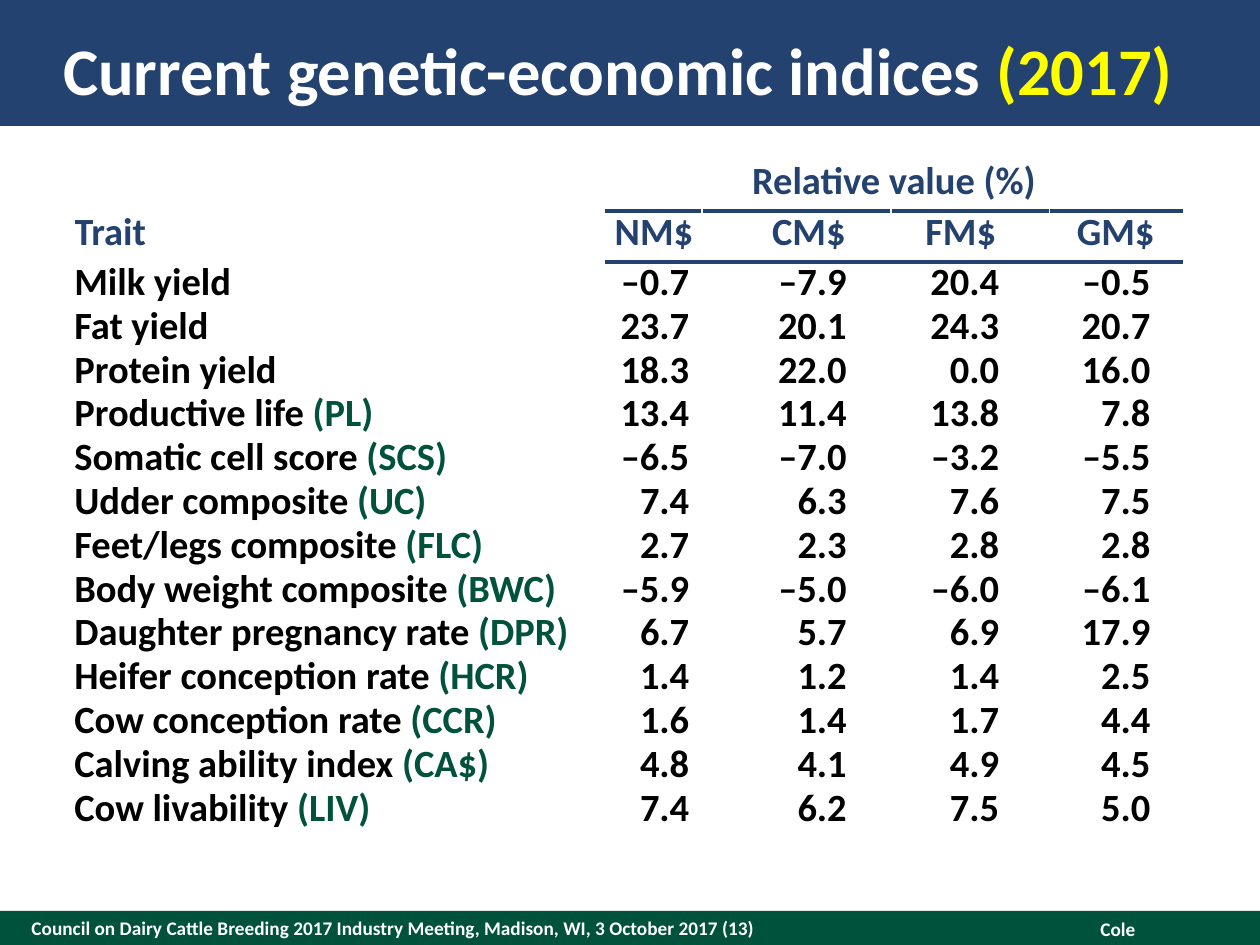
"""Build the slide of 2017 genetic-economic indices for dairy cattle."""
from dataclasses import dataclass
from typing import NamedTuple

from lxml import etree
from pptx import Presentation
from pptx.dml.color import RGBColor
from pptx.enum.shapes import MSO_SHAPE
from pptx.enum.text import MSO_ANCHOR, MSO_AUTO_SIZE, PP_ALIGN
from pptx.oxml.ns import qn
from pptx.util import Emu, Pt

RECTANGLE = MSO_SHAPE.RECTANGLE
TOP, MIDDLE, BOTTOM = MSO_ANCHOR.TOP, MSO_ANCHOR.MIDDLE, MSO_ANCHOR.BOTTOM
LEFT, CENTER, RIGHT = PP_ALIGN.LEFT, PP_ALIGN.CENTER, PP_ALIGN.RIGHT
NO_AUTOFIT = MSO_AUTO_SIZE.NONE
EMU_PER_PX = 9144
TITLE_ONLY = 5


@dataclass(frozen=True)
class Theme:
    font: str = "Calibri"
    navy: str = "244270"
    green: str = "00523C"
    yellow: str = "FFFF00"
    white: str = "FFFFFF"
    black: str = "000000"
    title_size: int = 38
    table_size: int = 22
    footer_size: int = 11
    rule_width: float = 2.25


class Area(NamedTuple):
    left: int
    top: int
    width: int
    height: int


class Insets(NamedTuple):
    left: int = 0
    top: int = 0
    right: int = 0
    bottom: int = 0


class Span(NamedTuple):
    text: str
    color: str


class Column(NamedTuple):
    heading: str
    width: int
    heading_insets: Insets
    value_insets: Insets


class Trait(NamedTuple):
    name: str
    code: str
    values: tuple[str, ...]


THEME = Theme()
TABLE_AREA = Area(59, 129, 879, 530)
TRAIT_WIDTH = 422
HEADER_HEIGHTS = (38, 40)
ROW_HEIGHT = 34
COLUMNS = (
    Column("NM$", 76, Insets(0, 5, 0, 5), Insets(right=10)),
    Column("CM$", 150, Insets(20, 5, 0, 5), Insets(left=10, right=35)),
    Column("FM$", 126, Insets(0, 5, 15, 5), Insets(right=40)),
    Column("GM$", 105, Insets(0, 5, 0, 5), Insets(right=25)),
)
TRAITS = (
    Trait("Milk yield", "", ("–0.7", "–7.9", "20.4", "–0.5")),
    Trait("Fat yield", "", ("23.7", "20.1", "24.3", "20.7")),
    Trait("Protein yield", "", ("18.3", "22.0", "0.0", "16.0")),
    Trait("Productive life", "PL", ("13.4", "11.4", "13.8", "7.8")),
    Trait("Somatic cell score", "SCS", ("–6.5", "–7.0", "–3.2", "–5.5")),
    Trait("Udder composite", "UC", ("7.4", "6.3", "7.6", "7.5")),
    Trait("Feet/legs composite", "FLC", ("2.7", "2.3", "2.8", "2.8")),
    Trait("Body weight composite", "BWC", ("–5.9", "–5.0", "–6.0", "–6.1")),
    Trait("Daughter pregnancy rate", "DPR", ("6.7", "5.7", "6.9", "17.9")),
    Trait("Heifer conception rate", "HCR", ("1.4", "1.2", "1.4", "2.5")),
    Trait("Cow conception rate", "CCR", ("1.6", "1.4", "1.7", "4.4")),
    Trait("Calving ability index", "CA$", ("4.8", "4.1", "4.9", "4.5")),
    Trait("Cow livability", "LIV", ("7.4", "6.2", "7.5", "5.0")),
)


def px(length: int) -> Emu:
    return Emu(length * EMU_PER_PX)


def set_insets(target, insets: Insets) -> None:
    for side, length in insets._asdict().items():
        setattr(target, f"margin_{side}", px(length))


def write(frame, spans: list[Span], size: int, align=LEFT, leading: int | None = None) -> None:
    para = frame.paragraphs[0]
    para.alignment = align
    if leading:
        para.line_spacing = Pt(leading)
    for text, color in spans:
        run = para.add_run()
        run.text = text
        run.font.name = THEME.font
        run.font.size = Pt(size)
        run.font.bold = True
        run.font.color.rgb = RGBColor.from_string(color)


def add_band(slide, area: Area, color: str) -> None:
    band = slide.shapes.add_shape(RECTANGLE, *map(px, area))
    band.shadow.inherit = False
    band.fill.solid()
    band.fill.fore_color.rgb = RGBColor.from_string(color)
    band.line.fill.background()


def add_footer(slide, area: Area, text: str, insets: Insets, anchor, align) -> None:
    frame = slide.shapes.add_textbox(*map(px, area)).text_frame
    frame.word_wrap = True
    frame.vertical_anchor = anchor
    set_insets(frame, insets)
    write(frame, [Span(text, THEME.white)], THEME.footer_size, align)


def place_title(slide, area: Area, spans: list[Span]) -> None:
    title = slide.shapes.title
    title.left, title.top, title.width, title.height = map(px, area)
    title.element.getparent().append(title.element)
    frame = title.text_frame
    frame.auto_size = NO_AUTOFIT
    frame.vertical_anchor = MIDDLE
    set_insets(frame, Insets())
    write(frame, spans, THEME.title_size)


def fill_cell(cell, spans: list[Span], insets: Insets, align, leading: int, anchor=TOP) -> None:
    cell.vertical_anchor = anchor
    set_insets(cell, insets)
    write(cell.text_frame, spans, THEME.table_size, align, leading)


def add_rule(cell, edge: str) -> None:
    properties = cell._tc.get_or_add_tcPr()
    line = etree.Element(qn(f"a:{edge}"), w=str(Pt(THEME.rule_width)))
    fill = etree.SubElement(line, qn("a:solidFill"))
    etree.SubElement(fill, qn("a:srgbClr"), val=THEME.navy)
    properties.insert(0, line)


def add_index_table(slide) -> None:
    shape = slide.shapes.add_table(len(TRAITS) + 2, len(COLUMNS) + 1, *map(px, TABLE_AREA))
    table = shape.table
    table.first_row = table.horz_banding = False
    widths = [TRAIT_WIDTH, *(column.width for column in COLUMNS)]
    for table_column, width in zip(table.columns, widths):
        table_column.width = px(width)
    heights = [*HEADER_HEIGHTS, *[ROW_HEIGHT] * len(TRAITS)]
    for row, height in zip(table.rows, heights):
        row.height = px(height)
    for cell in table.iter_cells():
        cell.fill.background()

    table.cell(0, 0).merge(table.cell(1, 0))
    table.cell(0, 1).merge(table.cell(0, len(COLUMNS)))
    for col, (text, align) in enumerate((("Trait", LEFT), ("Relative value (%)", CENTER))):
        fill_cell(table.cell(0, col), [Span(text, THEME.navy)], Insets(bottom=5), align, 24, BOTTOM)
    for col, column in enumerate(COLUMNS, 1):
        heading = table.cell(1, col)
        fill_cell(heading, [Span(column.heading, THEME.navy)], column.heading_insets, CENTER, 22, BOTTOM)
        add_rule(table.cell(0, col), "lnB")
        add_rule(heading, "lnT")

    for row, trait in enumerate(TRAITS, 2):
        spans = [Span(trait.name, THEME.black)]
        if trait.code:
            spans.append(Span(f" ({trait.code})", THEME.green))
        fill_cell(table.cell(row, 0), spans, Insets(), LEFT, 25)
        for col, (column, value) in enumerate(zip(COLUMNS, trait.values), 1):
            fill_cell(table.cell(row, col), [Span(value, THEME.black)], column.value_insets, RIGHT, 25)


def main() -> None:
    deck = Presentation()
    deck.slide_width, deck.slide_height = px(1000), px(750)
    slide = deck.slides.add_slide(deck.slide_layouts[TITLE_ONLY])
    add_band(slide, Area(0, 723, 1000, 27), THEME.green)
    add_band(slide, Area(0, 0, 1000, 100), THEME.navy)
    meeting = "Council on Dairy Cattle Breeding 2017 Industry Meeting, Madison, WI, 3 October 2017 (13)"
    add_footer(slide, Area(25, 723, 700, 27), meeting, Insets(), MIDDLE, LEFT)
    add_footer(slide, Area(711, 723, 200, 29), "Cole", Insets(10, 5, 10, 5), TOP, RIGHT)
    place_title(slide, Area(50, 20, 900, 70), [
        Span("Current genetic-economic indices ", THEME.white),
        Span("(2017)", THEME.yellow),
    ])
    add_index_table(slide)
    deck.save("out.pptx")


if __name__ == "__main__":
    main()
